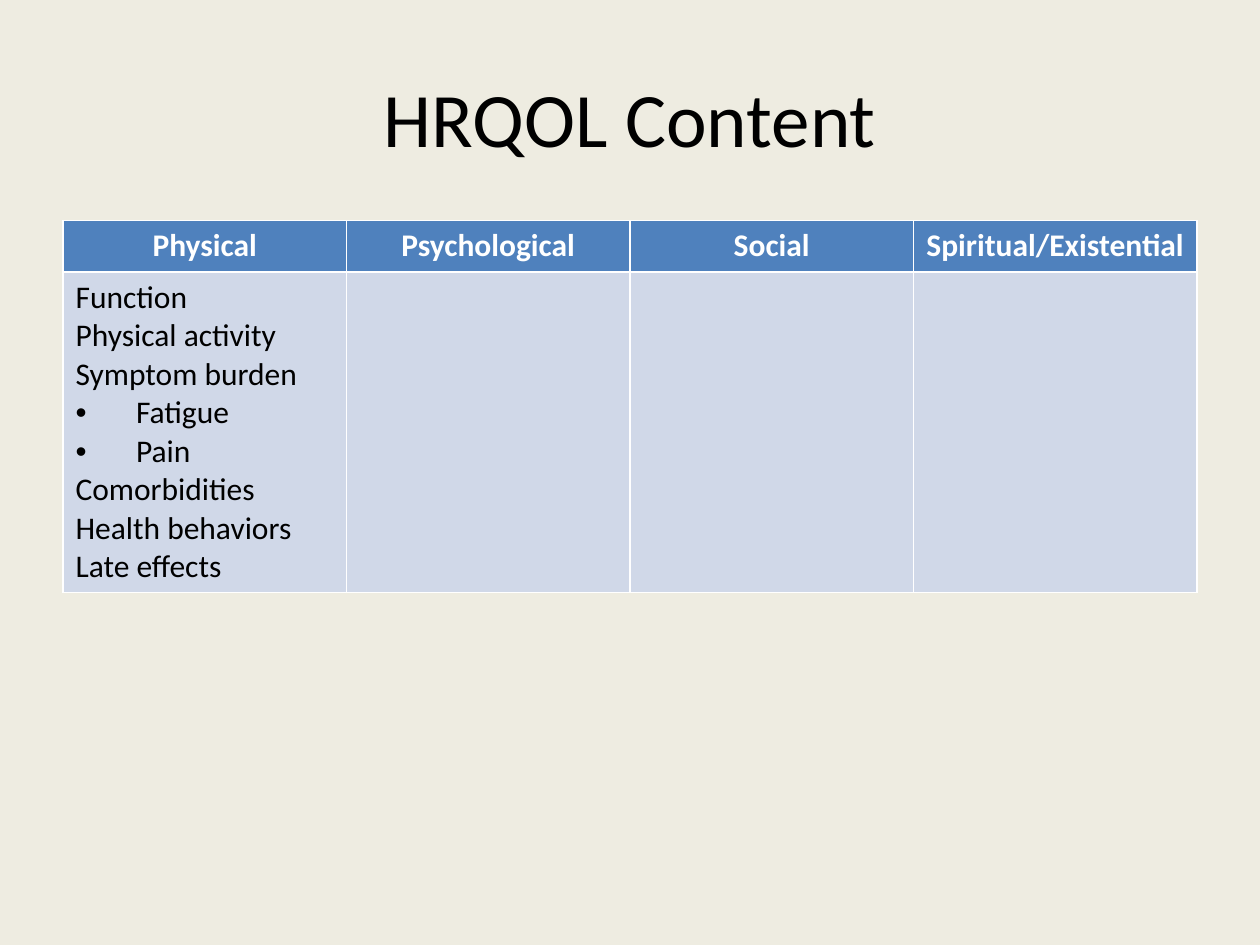
from lxml import etree
from pptx import Presentation
from pptx.dml.color import RGBColor
from pptx.enum.text import MSO_ANCHOR, PP_ALIGN
from pptx.oxml.ns import qn
from pptx.util import Inches, Pt

CENTER, LEFT = PP_ALIGN.CENTER, PP_ALIGN.LEFT
MIDDLE = MSO_ANCHOR.MIDDLE
TITLE_ONLY = 5

COLORS = {
    "background": "EEECE1",
    "header": "4F81BD",
    "body": "D0D8E8",
    "light": "FFFFFF",
    "dark": "000000",
}
FORMATS = {
    "title": {"size": Pt(44), "name": "Calibri", "bold": False},
    "header": {"size": Pt(18), "name": "Calibri", "bold": True},
    "body": {"size": Pt(18), "name": "Calibri", "bold": False},
}

DOMAINS = {
    "Physical": [
        "Function",
        "Physical activity",
        "Symptom burden",
        "Fatigue",
        "Pain",
        "Comorbidities",
        "Health behaviors",
        "Late effects",
    ],
    "Psychological": [],
    "Social": [],
    "Spiritual/Existential": [],
}
SYMPTOMS = {"Fatigue", "Pain"}


class SlideBuilder:
    def __init__(self, slide):
        self.slide = slide

    def color(self, key):
        return RGBColor.from_string(COLORS[key])

    def background(self):
        fill = self.slide.background.fill
        fill.solid()
        fill.fore_color.rgb = self.color("background")

    def add_text(self, paragraph, text, style, color, align):
        paragraph.alignment = align
        run = paragraph.add_run()
        run.text = text
        for attribute, value in FORMATS[style].items():
            setattr(run.font, attribute, value)
        run.font.color.rgb = self.color(color)

    def bullet(self, paragraph, indent):
        properties = paragraph._p.get_or_add_pPr()
        properties.set("marL", str(indent))
        properties.set("indent", str(-indent))
        etree.SubElement(properties, qn("a:buFont"), typeface="Arial")
        etree.SubElement(properties, qn("a:buChar"), char="•")

    def title(self, text, left, top, width, height):
        heading = self.slide.shapes.title
        heading.left, heading.top = left, top
        heading.width, heading.height = width, height
        heading.text_frame.vertical_anchor = MIDDLE
        self.add_text(heading.text_frame.paragraphs[0], text, "title", "dark", CENTER)

    def cell(self, cell, lines, style, color, align):
        cell.fill.solid()
        cell.fill.fore_color.rgb = self.color(style)
        for index, line in enumerate(lines):
            frame = cell.text_frame
            paragraph = frame.add_paragraph() if index else frame.paragraphs[0]
            self.add_text(paragraph, line, style, color, align)
            if line in SYMPTOMS:
                self.bullet(paragraph, Inches(0.48))

    def table(self, columns, left, top, width, row_heights):
        grid = self.slide.shapes.add_table(
            len(row_heights), len(columns), left, top, width, sum(row_heights)
        ).table
        for row, height in zip(grid.rows, row_heights):
            row.height = height
        for index, (domain, topics) in enumerate(columns.items()):
            self.cell(grid.cell(0, index), [domain], "header", "light", CENTER)
            self.cell(grid.cell(1, index), topics, "body", "dark", LEFT)


def main():
    presentation = Presentation()
    presentation.slide_width = Inches(10)
    presentation.slide_height = Inches(7.5)
    layout = presentation.slide_layouts[TITLE_ONLY]
    builder = SlideBuilder(presentation.slides.add_slide(layout))
    builder.background()
    builder.title("HRQOL Content", Inches(0.5), Inches(0.3), Inches(9), Inches(1.25))
    builder.table(
        DOMAINS, Inches(0.5), Inches(1.75), Inches(9), [Inches(0.41), Inches(2.5)]
    )
    presentation.save("out.pptx")


if __name__ == "__main__":
    main()
